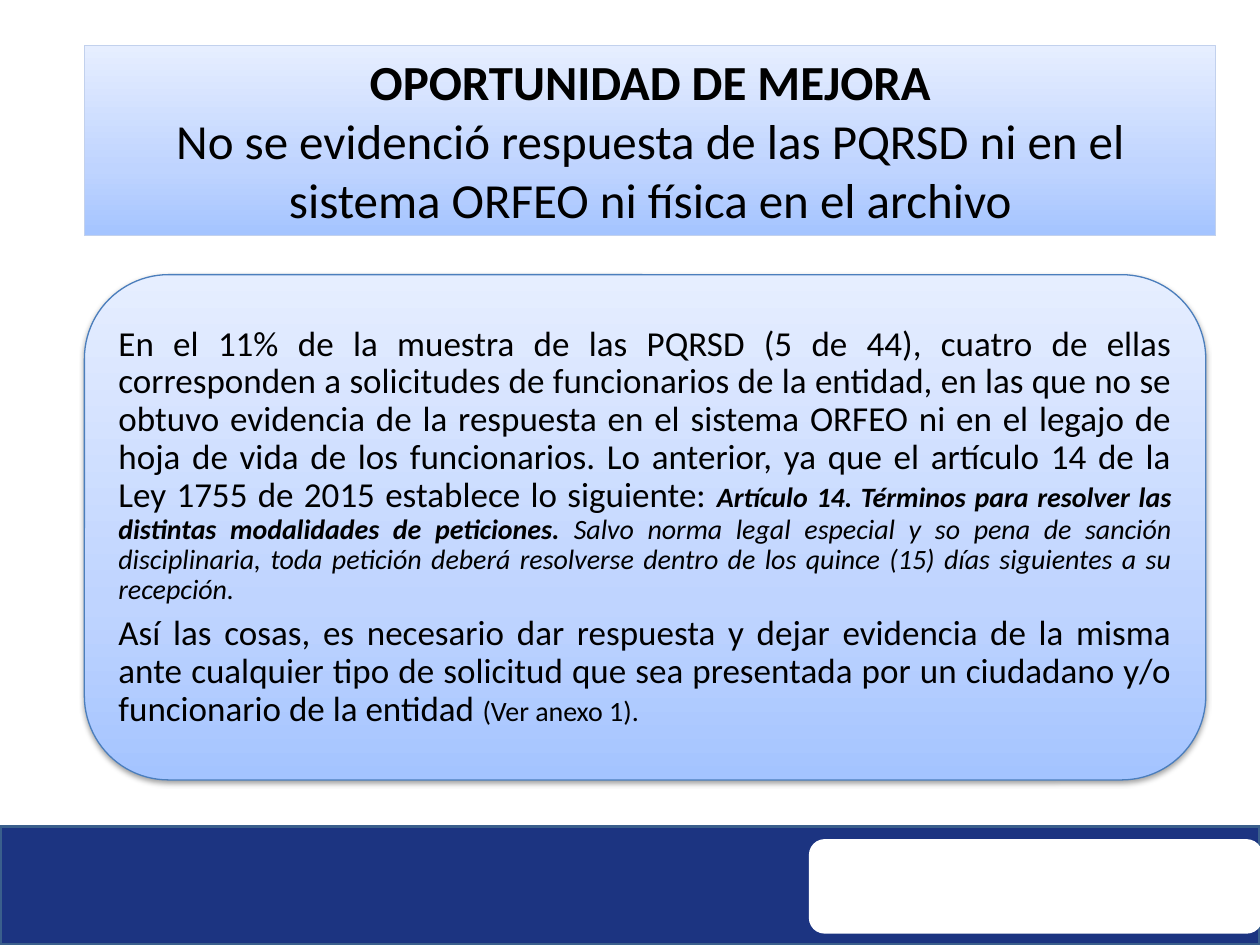
from lxml.etree import SubElement
from pptx import Presentation
from pptx.dml.color import RGBColor
from pptx.enum.shapes import MSO_SHAPE as Shape
from pptx.enum.text import MSO_ANCHOR as Anchor, MSO_AUTO_SIZE as AutoSize, PP_ALIGN as Align
from pptx.oxml.ns import qn
from pptx.util import Inches, Pt

# Content: paragraphs of (text, size, bold, italic) runs
TITLE = [
    [("OPORTUNIDAD DE MEJORA", 28, True, False)],
    [("No se evidenció respuesta de las PQRSD ni en el sistema ORFEO "
      "ni física en el archivo", 28, False, False)],
]
FINDING = [
    [("En el 11% de la muestra de las PQRSD (5 de 44), cuatro de ellas corresponden a "
      "solicitudes de funcionarios de la entidad, en las que no se obtuvo evidencia de la "
      "respuesta en el sistema ORFEO ni en el legajo de hoja de vida de los funcionarios. "
      "Lo anterior, ya que el artículo 14 de la Ley 1755 de 2015 establece lo siguiente: ",
      20, False, False),
     ("Artículo 14. Términos para resolver las distintas modalidades de peticiones. ",
      16, True, True),
     ("Salvo norma legal especial y so pena de sanción disciplinaria, toda petición deberá "
      "resolverse dentro de los quince (15) días siguientes a su recepción.",
      16, False, True)],
    [("Así las cosas, es necesario dar respuesta y dejar evidencia de la misma ante cualquier "
      "tipo de solicitud que sea presentada por un ciudadano y/o funcionario de la entidad ",
      20, False, False),
     ("(Ver anexo 1).", 16, False, False)],
]

# Colours
BLACK = RGBColor(0x00, 0x00, 0x00)
WHITE = RGBColor(0xFF, 0xFF, 0xFF)
NAVY = RGBColor(0x1C, 0x34, 0x81)
NAVY_EDGE = RGBColor(0x3A, 0x5F, 0x8C)
TITLE_EDGE = RGBColor(0xC2, 0xD1, 0xED)
PANEL_EDGE = RGBColor(0x4B, 0x7E, 0xBC)
GRADIENT = [(0, RGBColor(0xA4, 0xC4, 0xFF)),
            (35, RGBColor(0xBF, 0xD4, 0xFF)),
            (100, RGBColor(0xE6, 0xEE, 0xFF))]

# Layout in inches
WIDTH, HEIGHT = 10, 7.5
LEFT = 0.67
FOOTER_TOP = 6.56
PANEL = (LEFT, 2.18, 8.9, 4.01)
PANEL_INSET = 0.19   # keeps the text clear of the rounded corners


def add_box(page, kind, place, fill=None, edge=None, weight=0.75):
    box = page.shapes.add_shape(kind, *map(Inches, place))
    box.shadow.inherit = False
    if fill is None:
        fill_gradient(box)
    else:
        box.fill.solid()
        box.fill.fore_color.rgb = fill
    if edge is None:
        box.line.fill.background()
    else:
        box.line.color.rgb = edge
        box.line.width = Pt(weight)
    return box


def fill_gradient(box):
    box.fill.gradient()
    box.fill.gradient_angle = 90
    stops = next(box.element.spPr.iter(qn("a:gsLst")))
    for stop in list(stops):
        stops.remove(stop)
    for percent, colour in GRADIENT:
        stop = SubElement(stops, qn("a:gs"), pos=str(percent * 1000))
        SubElement(stop, qn("a:srgbClr"), val=str(colour))


def add_shadow(box):
    effects = box.element.spPr.find(qn("a:effectLst"))
    shadow = SubElement(effects, qn("a:outerShdw"), blurRad=str(Pt(3.1)),
                        dist=str(Pt(1.6)), dir="5400000", rotWithShape="0")
    colour = SubElement(shadow, qn("a:srgbClr"), val=str(BLACK))
    SubElement(colour, qn("a:alpha"), val="38000")


def write(frame, paragraphs, align, line_spacing=None, space_after=None):
    frame.word_wrap = True
    for index, runs in enumerate(paragraphs):
        para = frame.add_paragraph() if index else frame.paragraphs[0]
        para.alignment = align
        para.line_spacing = line_spacing
        para.space_after = space_after
        for text, size, bold, italic in runs:
            span = para.add_run()
            span.text = text
            span.font.name = "Calibri"
            span.font.size = Pt(size)
            span.font.bold = bold
            span.font.italic = italic
            span.font.color.rgb = BLACK


deck = Presentation()
deck.slide_width, deck.slide_height = Inches(WIDTH), Inches(HEIGHT)
page = deck.slides.add_slide(deck.slide_layouts[6])

# Footer band with its white plate
add_box(page, Shape.RECTANGLE, (0, FOOTER_TOP, WIDTH, HEIGHT - FOOTER_TOP), NAVY, NAVY_EDGE, 2)
add_box(page, Shape.ROUNDED_RECTANGLE, (6.42, FOOTER_TOP + 0.1, 3.6, 0.75), WHITE)

# Title
title = add_box(page, Shape.RECTANGLE, (LEFT, 0.36, 8.98, 1.51), edge=TITLE_EDGE)
title.text_frame.vertical_anchor = Anchor.TOP
title.text_frame.auto_size = AutoSize.SHAPE_TO_FIT_TEXT
write(title.text_frame, TITLE, Align.CENTER)

# Finding panel and its text
panel = add_box(page, Shape.ROUNDED_RECTANGLE, PANEL, edge=PANEL_EDGE)
add_shadow(panel)
left, top, width, height = PANEL
finding = page.shapes.add_textbox(
    Inches(left + PANEL_INSET), Inches(top + PANEL_INSET),
    Inches(width - 2 * PANEL_INSET), Inches(height - 2 * PANEL_INSET))
frame = finding.text_frame
frame.vertical_anchor = Anchor.MIDDLE
frame.margin_left = frame.margin_right = Inches(0.08)
frame.margin_top = frame.margin_bottom = Inches(0.08)
write(frame, FINDING, Align.JUSTIFY, line_spacing=0.9, space_after=Pt(5.6))

deck.save("out.pptx")
